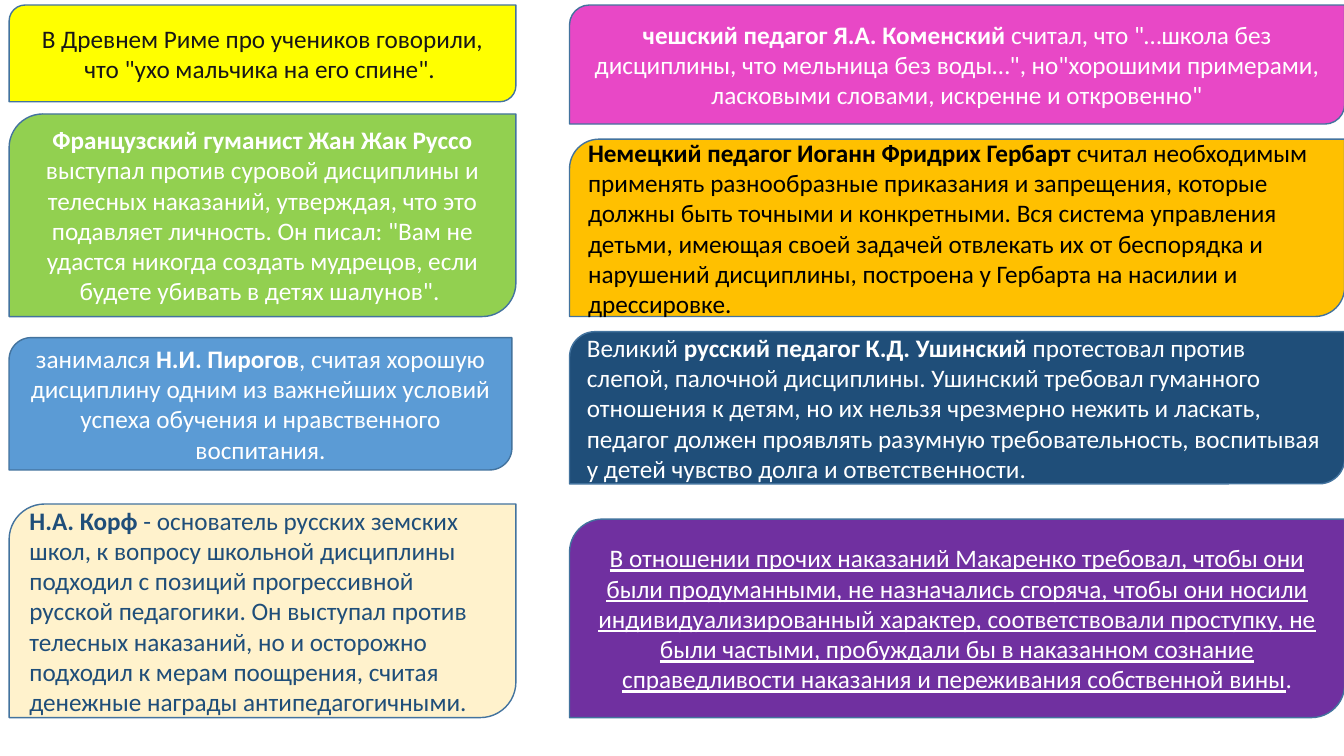
from pptx import Presentation
from pptx.dml.color import RGBColor
from pptx.enum.shapes import MSO_SHAPE
from pptx.enum.text import MSO_ANCHOR, PP_ALIGN
from pptx.util import Pt

CENTER, LEFT = PP_ALIGN.CENTER, PP_ALIGN.LEFT
PLAIN, BOLD, UNDERLINE = "plain", "bold", "underline"
FONT, SIZE, OUTLINE = "Calibri", 18, "43739E"

LEFT_CARDS = [
    (3.6, 362, 69.1, "FFFF00", "181717", CENTER, [
        ("В Древнем Риме про учеников говорили, что \"ухо мальчика на его спине\". ", PLAIN)]),
    (81.4, 362, 144.7, "92D050", "FFFFFF", CENTER, [
        ("Французский гуманист Жан Жак Руссо", BOLD),
        (" выступал против суровой дисциплины и телесных наказаний, утверждая, что это "
         "подавляет личность. Он писал: \"Вам не удастся никогда создать мудрецов, если "
         "будете убивать в детях шалунов\". ", PLAIN)]),
    (241.2, 359.2, 94.5, "5B9BD5", "FFFFFF", CENTER, [
        ("занимался ", PLAIN),
        ("Н.И. Пирогов", BOLD),
        (", считая хорошую дисциплину одним из важнейших условий успеха обучения и "
         "нравственного воспитания.", PLAIN)]),
    (360, 362, 152.6, "FFF2CC", "1F4E79", LEFT, [
        ("Н.А. Корф", BOLD),
        (" - основатель русских земских школ, к вопросу школьной дисциплины подходил с "
         "позиций прогрессивной русской педагогики. Он выступал против телесных наказаний, "
         "но и осторожно подходил к мерам поощрения, считая денежные награды "
         "антипедагогичными.", PLAIN)]),
]
RIGHT_CARDS = [
    (3.6, 553.7, 85, "E848C6", "FFFFFF", CENTER, [
        ("чешский педагог Я.А. Коменский", BOLD),
        (" считал, что \"…школа без дисциплины, что мельница без воды…\", но\"хорошими "
         "примерами, ласковыми словами, искренне и откровенно\"", PLAIN)]),
    (99.4, 553.7, 126.7, "FFC000", "000000", LEFT, [
        ("Немецкий педагог Иоганн Фридрих Гербарт", BOLD),
        (" считал необходимым применять разнообразные приказания и запрещения, которые "
         "должны быть точными и конкретными. Вся система управления детьми, имеющая своей "
         "задачей отвлекать их от беспорядка и нарушений дисциплины, построена у Гербарта "
         "на насилии и дрессировке.", PLAIN)]),
    (236.9, 553.7, 108.7, "1F4E79", "FFFFFF", LEFT, [
        ("Великий ", PLAIN),
        ("русский педагог К.Д. Ушинский", BOLD),
        (" протестовал против слепой, палочной дисциплины. Ушинский требовал гуманного "
         "отношения к детям, но их нельзя чрезмерно нежить и ласкать, педагог должен "
         "проявлять разумную требовательность, воспитывая у детей чувство долга и "
         "ответственности.", PLAIN)]),
    (370.8, 553.7, 141.8, "7030A0", "FFFFFF", CENTER, [
        ("В отношении прочих наказаний Макаренко требовал, чтобы они были продуманными, "
         "не назначались сгоряча, чтобы они носили индивидуализированный характер, "
         "соответствовали проступку, не были частыми, пробуждали бы в наказанном сознание "
         "справедливости наказания и переживания собственной вины", UNDERLINE),
        (".", PLAIN)]),
]
COLUMNS = [(6.5, LEFT_CARDS), (406.8, RIGHT_CARDS)]


def paint(color, value):
    color.rgb = RGBColor.from_string(value)


def add_card(s, x, y, width, height, fill, ink, align, runs):
    sp = s.shapes.add_shape(MSO_SHAPE.ROUND_2_DIAG_RECTANGLE,
                            Pt(x), Pt(y), Pt(width), Pt(height))
    sp.shadow.inherit = False
    sp.fill.solid()
    paint(sp.fill.fore_color, fill)
    paint(sp.line.color, OUTLINE)
    sp.line.width = Pt(1)
    tf = sp.text_frame
    tf.word_wrap = True
    tf.vertical_anchor = MSO_ANCHOR.MIDDLE
    p = tf.paragraphs[0]
    p.alignment = align
    for text, style in runs:
        r = p.add_run()
        r.text = text
        r.font.name = FONT
        r.font.size = Pt(SIZE)
        r.font.bold = style == BOLD
        r.font.underline = style == UNDERLINE
        paint(r.font.color, ink)


def main():
    prs = Presentation()
    prs.slide_width, prs.slide_height = Pt(960), Pt(540)
    s = prs.slides.add_slide(prs.slide_layouts[6])
    for x, cards in COLUMNS:
        for card in cards:
            add_card(s, x, *card)
    prs.save("out.pptx")


if __name__ == "__main__":
    main()
